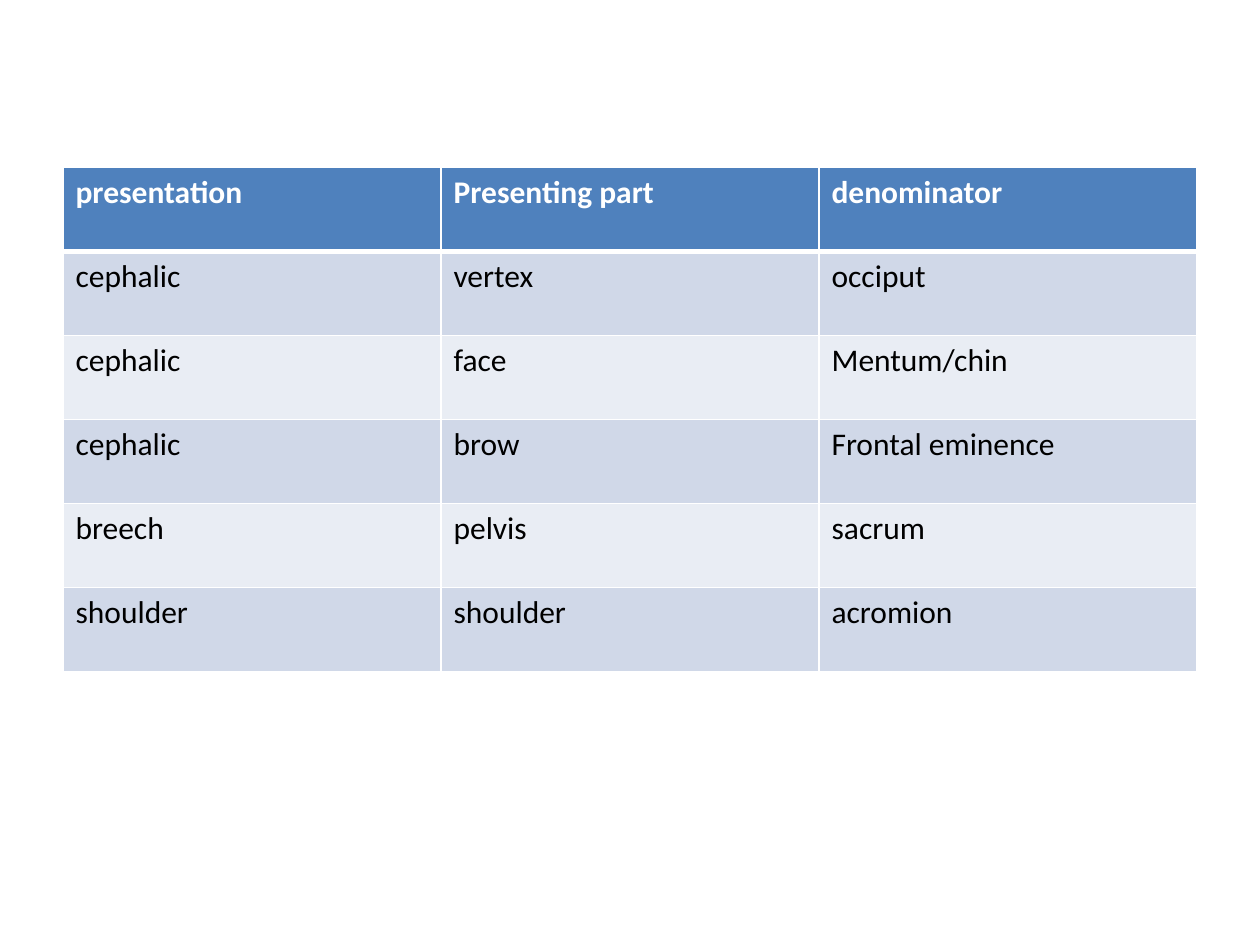
from lxml.etree import SubElement
from pptx import Presentation
from pptx.dml.color import RGBColor
from pptx.oxml.ns import qn
from pptx.util import Inches, Pt

ROWS = [
    ("presentation", "Presenting part", "denominator"),
    ("cephalic", "vertex", "occiput"),
    ("cephalic", "face", "Mentum/chin"),
    ("cephalic", "brow", "Frontal eminence"),
    ("breech", "pelvis", "sacrum"),
    ("shoulder", "shoulder", "acromion"),
]
HEADER_FILL = "4F81BD"
BAND_FILLS = ("E9EDF4", "D0D8E8")
WHITE = "FFFFFF"
BLACK = "000000"


def color(value):
    return RGBColor.from_string(value)


def set_borders(cell, left=1, right=1, top=1, bottom=1):
    properties = cell._tc.get_or_add_tcPr()
    widths = {"a:lnL": left, "a:lnR": right, "a:lnT": top, "a:lnB": bottom}
    for tag, width in widths.items():
        line = SubElement(properties, qn(tag), w=str(Pt(width)))
        fill = SubElement(line, qn("a:solidFill"))
        SubElement(fill, qn("a:srgbClr"), val=WHITE)


def style_cell(cell, text, row):
    is_header = row == 0
    set_borders(cell, top=3 if row == 1 else 1, bottom=3 if is_header else 1)
    cell.fill.solid()
    cell.fill.fore_color.rgb = color(HEADER_FILL if is_header else BAND_FILLS[row % 2])
    cell.text = text
    font = cell.text_frame.paragraphs[0].font
    font.name = "Calibri"
    font.size = Pt(18)
    font.bold = is_header
    font.color.rgb = color(WHITE if is_header else BLACK)


def add_presentation_table(page):
    frame = page.shapes.add_table(
        len(ROWS), len(ROWS[0]), Inches(0.5), Inches(1.33), Inches(9), Inches(4)
    )
    for row, texts in enumerate(ROWS):
        for column, text in enumerate(texts):
            style_cell(frame.table.cell(row, column), text, row)


def main():
    deck = Presentation()
    deck.slide_width = Inches(10)
    deck.slide_height = Inches(7.5)
    page = deck.slides.add_slide(deck.slide_layouts[6])
    add_presentation_table(page)
    deck.save("out.pptx")


if __name__ == "__main__":
    main()
